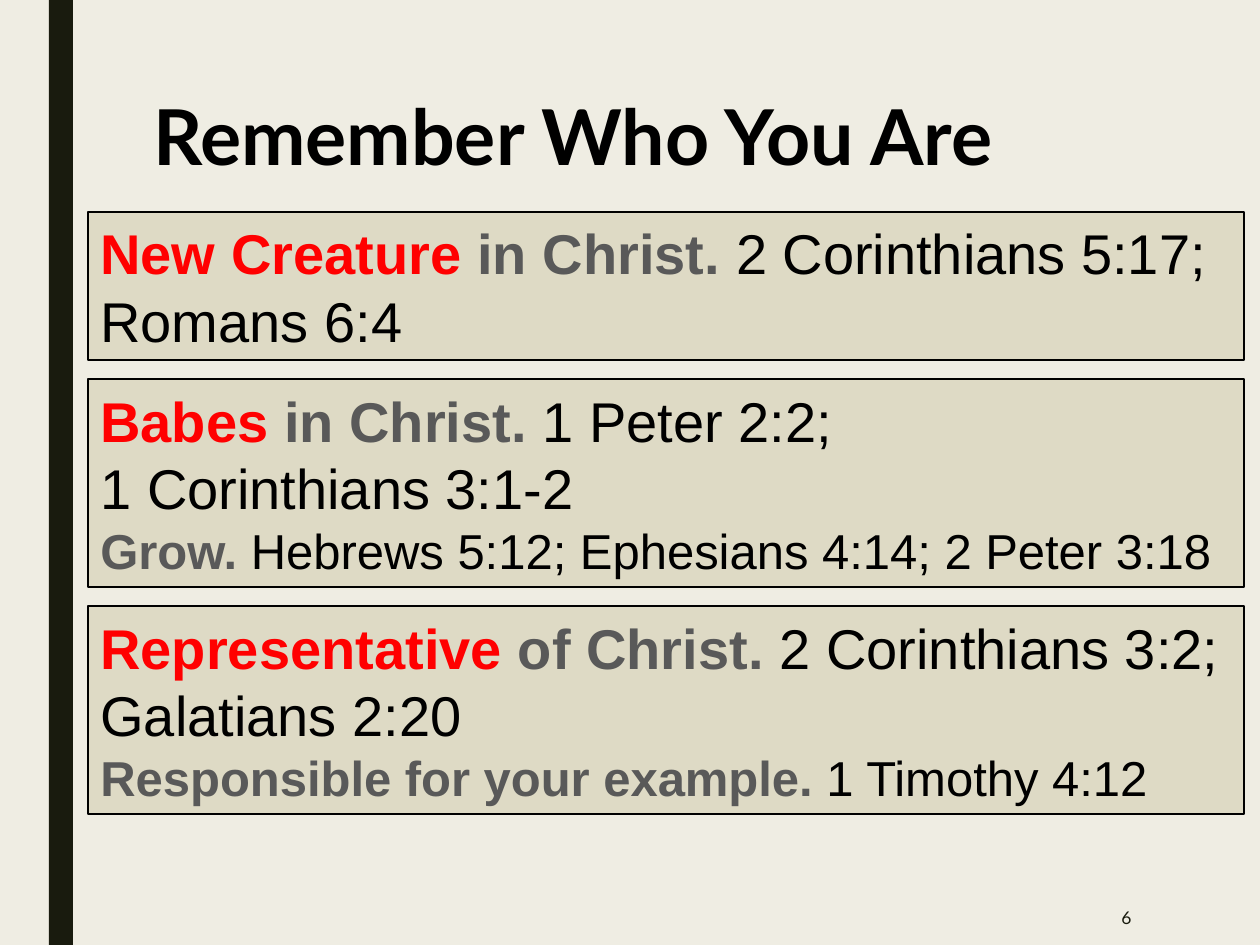
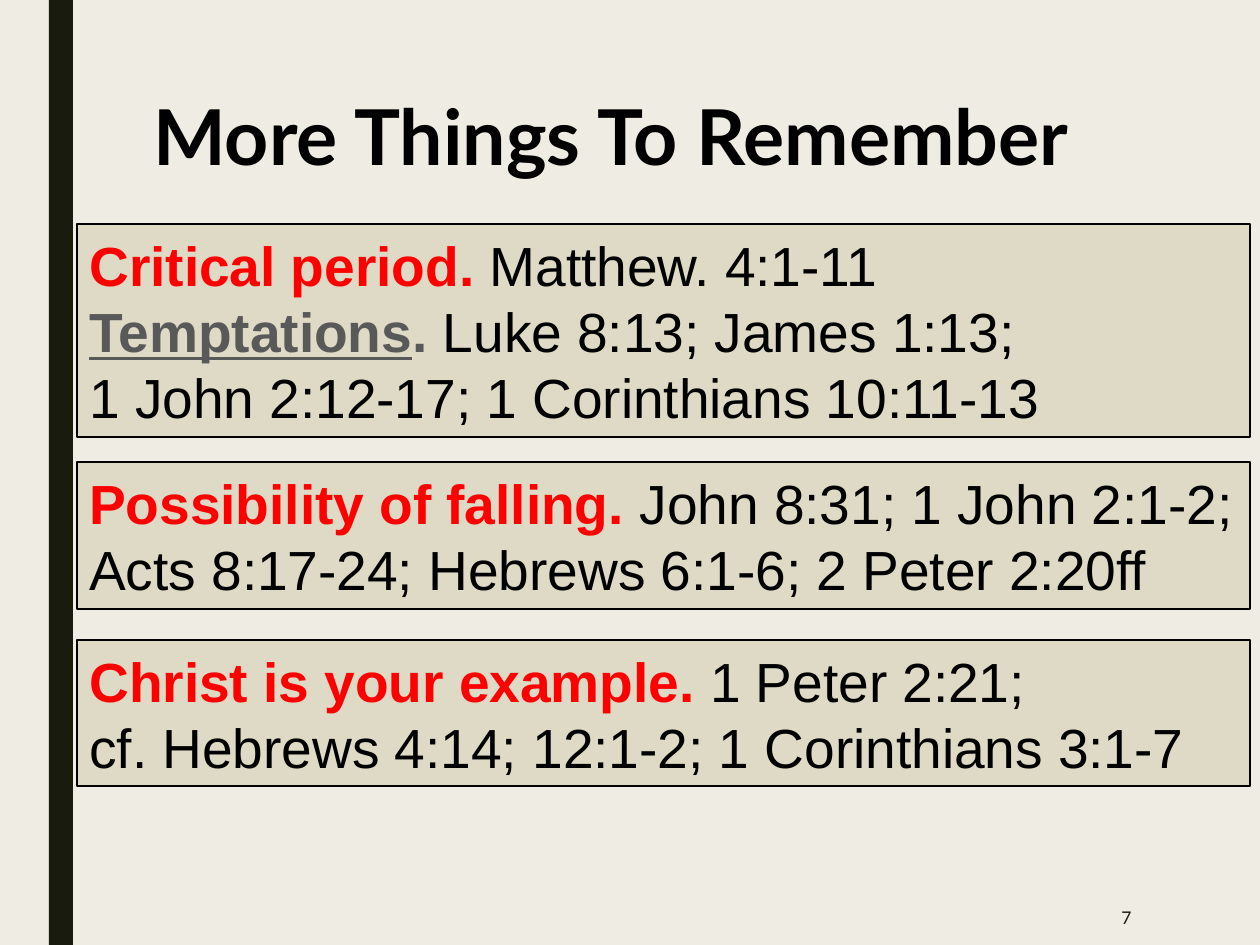
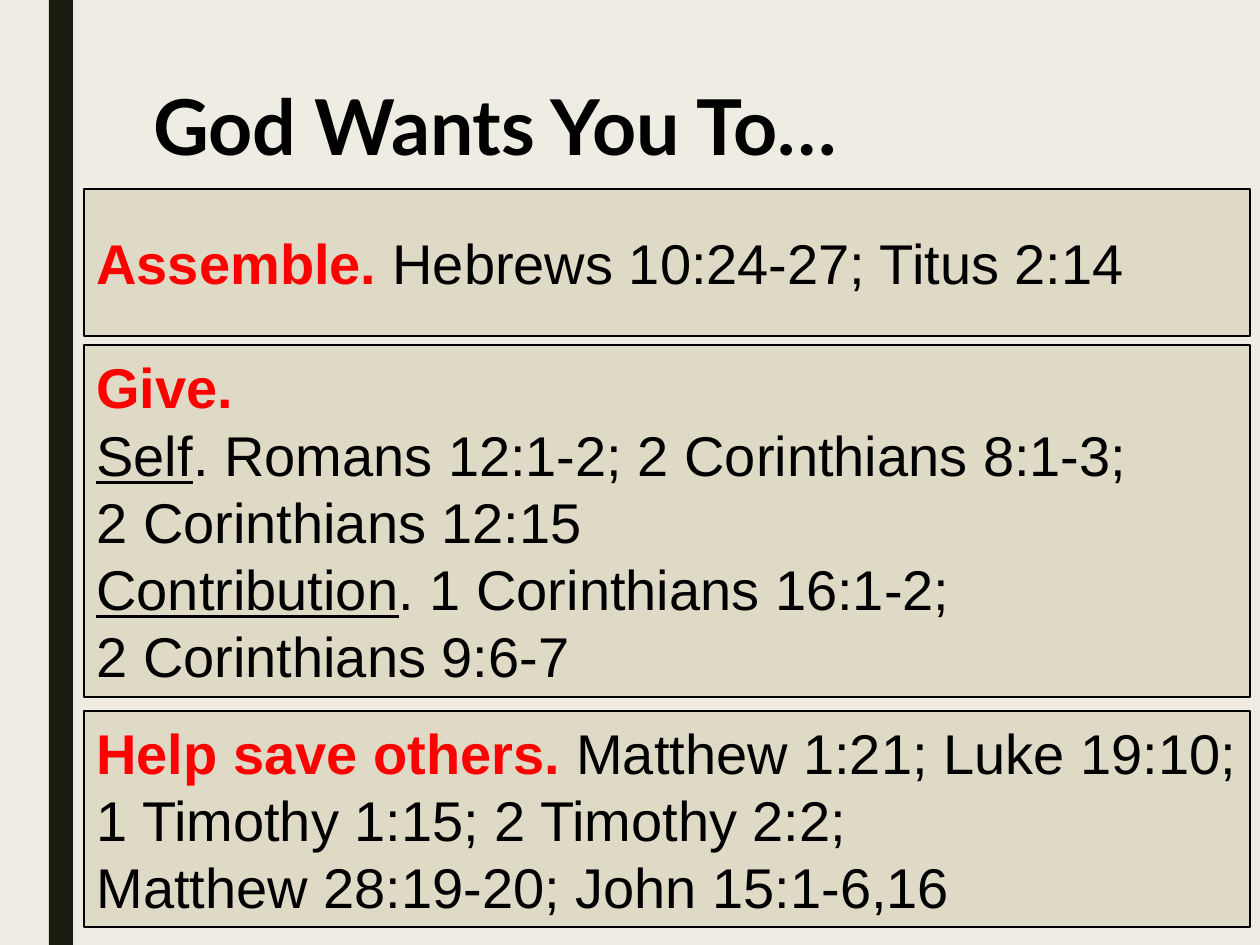
from pptx import Presentation
from pptx.dml.color import RGBColor
from pptx.enum.shapes import MSO_SHAPE
from pptx.enum.text import MSO_ANCHOR, PP_ALIGN
from pptx.util import Emu, Pt

PIXELS_PER_INCH = 126
SLIDE_WIDTH, SLIDE_HEIGHT = 1260, 945

CREAM = RGBColor(0xEF, 0xED, 0xE3)
SAND = RGBColor(0xDE, 0xDA, 0xC5)
OLIVE = RGBColor(0x19, 0x1B, 0x0E)
BLACK = RGBColor(0x00, 0x00, 0x00)
RED = RGBColor(0xFF, 0x00, 0x00)
GRAY = RGBColor(0x59, 0x59, 0x59)

HEADING_FONT, BODY_FONT = "Lato", "Arial"
LINE_HEIGHT = 1.2

# Run formats used inside the verse boxes
POINT = {"color": RED, "bold": True}
LABEL = {"color": GRAY, "bold": True}
UNDERLINED_LABEL = {**LABEL, "underline": True}
VERSE = {"color": BLACK}
UNDERLINED_VERSE = {**VERSE, "underline": True}


def px(length):
    return Emu(round(length * 914400 / PIXELS_PER_INCH))


def add_text(paragraph, text, font=BODY_FONT, size=32, color=BLACK,
             bold=False, underline=False):
    run = paragraph.add_run()
    run.text = text
    run.font.name = font
    run.font.size = Pt(size)
    run.font.color.rgb = color
    run.font.bold = bold
    run.font.underline = underline


class Deck:
    """Holds the shared style and the slide being built."""

    def __init__(self):
        self.presentation = Presentation()
        self.presentation.slide_width = px(SLIDE_WIDTH)
        self.presentation.slide_height = px(SLIDE_HEIGHT)
        self.slide = None

    def add_slide(self, title, title_top=94, number=None):
        self.slide = self.presentation.slides.add_slide(
            self.presentation.slide_layouts[6])
        background = self.slide.background.fill
        background.solid()
        background.fore_color.rgb = CREAM
        self.add_rectangle(49, 0, 24, SLIDE_HEIGHT, OLIVE)
        self.add_title(title, title_top)
        if number is not None:
            self.add_number(number)

    def add_rectangle(self, left, top, width, height, color):
        shape = self.slide.shapes.add_shape(
            MSO_SHAPE.RECTANGLE, px(left), px(top), px(width), px(height))
        shape.shadow.inherit = False
        shape.fill.solid()
        shape.fill.fore_color.rgb = color
        shape.line.fill.background()
        return shape

    def add_text_box(self, left, top, width, height, anchor):
        frame = self.slide.shapes.add_textbox(
            px(left), px(top), px(width), px(height)).text_frame
        frame.word_wrap = True
        frame.vertical_anchor = anchor
        return frame.paragraphs[0]

    def add_title(self, text, top):
        paragraph = self.add_text_box(141, top, 993, 96, MSO_ANCHOR.TOP)
        paragraph.line_spacing = 0.89
        add_text(paragraph, text, font=HEADING_FONT, size=44, bold=True)

    def add_number(self, number):
        paragraph = self.add_text_box(979, 890, 165, 55, MSO_ANCHOR.MIDDLE)
        paragraph.alignment = PP_ALIGN.RIGHT
        add_text(paragraph, str(number), font=HEADING_FONT, size=10, color=OLIVE)

    def add_verse_box(self, left, top, width, height, lines, size=32):
        """Each line is a list of (text, format) runs."""
        shape = self.add_rectangle(left, top, width, height, SAND)
        shape.line.color.rgb = BLACK
        shape.line.width = Pt(0.75)
        frame = shape.text_frame
        frame.word_wrap = True
        frame.vertical_anchor = MSO_ANCHOR.MIDDLE
        for index, runs in enumerate(lines):
            paragraph = frame.add_paragraph() if index else frame.paragraphs[0]
            paragraph.alignment = PP_ALIGN.LEFT
            line_size = runs[0][1].get("size", size)
            paragraph.line_spacing = Pt(line_size * LINE_HEIGHT)
            for text, style in runs:
                add_text(paragraph, text, **{"size": size, **style})

    def add_verse_boxes(self, left, width, boxes, size=32):
        for top, height, lines in boxes:
            self.add_verse_box(left, top, width, height, lines, size)


def small(style):
    return {**style, "size": 28}


def main():
    deck = Deck()

    # Who you are
    deck.add_slide("Remember Who You Are", number=6)
    deck.add_verse_boxes(88, 1156, [
        (212, 148, [
            [("New Creature ", POINT), ("in Christ. ", LABEL),
             ("2 Corinthians 5:17;", VERSE)],
            [("Romans 6:4", VERSE)],
        ]),
        (379, 208, [
            [("Babes ", POINT), ("in Christ. ", LABEL), ("1 Peter 2:2;", VERSE)],
            [("1 Corinthians 3:1-2", VERSE)],
            [("Grow. ", small(LABEL)),
             ("Hebrews 5:12; Ephesians 4:14; 2 Peter 3:18", small(VERSE))],
        ]),
        (606, 208, [
            [("Representative ", POINT), ("of Christ. ", LABEL),
             ("2 Corinthians 3:2;", VERSE)],
            [("Galatians 2:20", VERSE)],
            [("Responsible for your example. ", small(LABEL)),
             ("1 Timothy 4:12", small(VERSE))],
        ]),
    ])

    # Temptation, falling and the example
    deck.add_slide("More Things To Remember", number=7)
    deck.add_verse_boxes(77, 1173, [
        (224, 213, [
            [("Critical period. ", POINT), ("Matthew. 4:1-11", VERSE)],
            [("Temptations", UNDERLINED_LABEL), (". ", LABEL),
             ("Luke 8:13; James 1:13;", VERSE)],
            [("1 John 2:12-17; 1 Corinthians 10:11-13", VERSE)],
        ]),
        (462, 147, [
            [("Possibility of falling. ", POINT),
             ("John 8:31; 1 John 2:1-2; Acts 8:17-24; Hebrews 6:1-6; "
              "2 Peter 2:20ff", VERSE)],
        ]),
        (640, 146, [
            [("Christ is your example. ", POINT), ("1 Peter 2:21;", VERSE)],
            [("cf. Hebrews 4:14; 12:1-2; 1 Corinthians 3:1-7", VERSE)],
        ]),
    ], size=31.5)

    # What God wants
    deck.add_slide("God Wants You To…", title_top=84)
    deck.add_verse_boxes(84, 1166, [
        (189, 147, [
            [("Assemble. ", POINT), ("Hebrews 10:24-27; Titus 2:14", VERSE)],
        ]),
        (345, 352, [
            [("Give.", POINT)],
            [("Self", UNDERLINED_VERSE),
             (". Romans 12:1-2; 2 Corinthians 8:1-3;", VERSE)],
            [("2 Corinthians 12:15", VERSE)],
            [("Contribution", UNDERLINED_VERSE),
             (". 1 Corinthians 16:1-2;", VERSE)],
            [("2 Corinthians 9:6-7", VERSE)],
        ]),
        (711, 216, [
            [("Help save others. ", POINT),
             ("Matthew 1:21; Luke 19:10; 1 Timothy 1:15; 2 Timothy 2:2;", VERSE)],
            [("Matthew 28:19-20; John 15:1-6,16", VERSE)],
        ]),
    ])

    deck.presentation.save("out.pptx")


if __name__ == "__main__":
    main()
